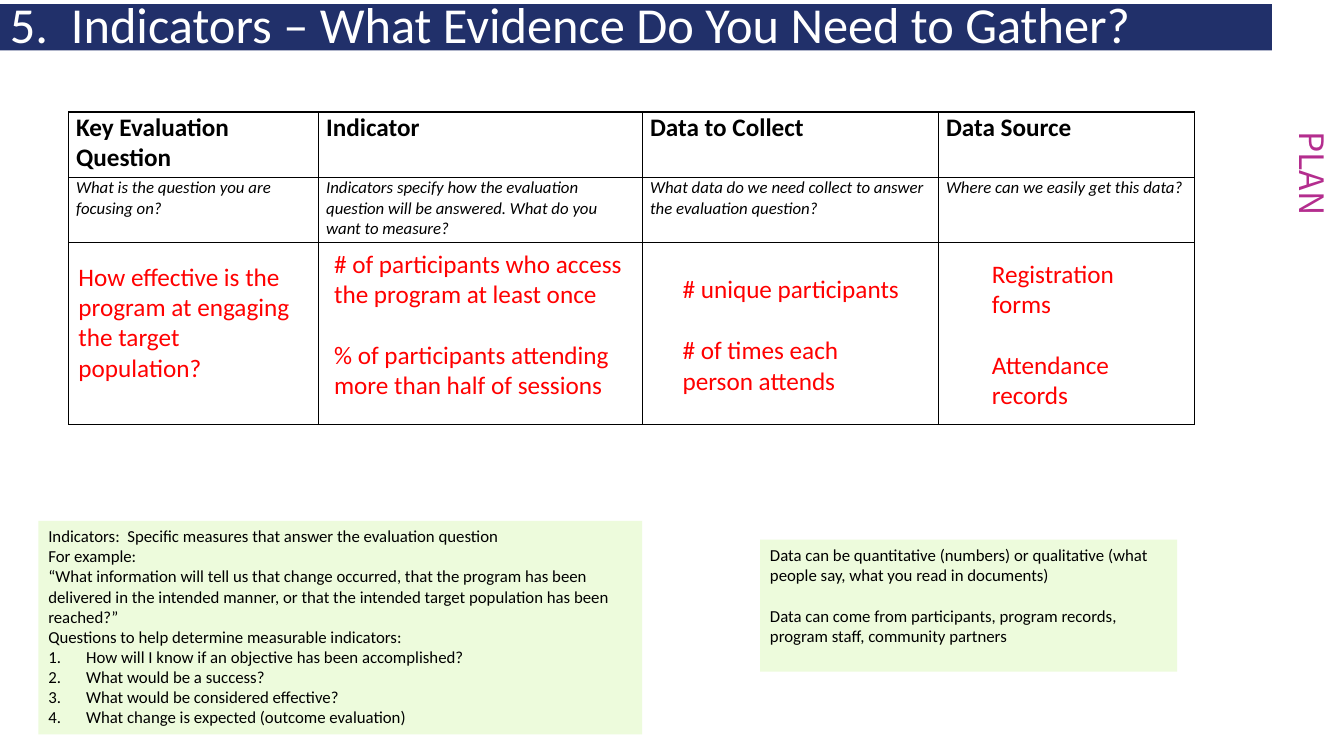
from dataclasses import dataclass
from itertools import accumulate

from lxml.etree import SubElement
from pptx import Presentation
from pptx.dml.color import RGBColor
from pptx.enum.shapes import MSO_SHAPE
from pptx.enum.text import MSO_ANCHOR, PP_ALIGN
from pptx.oxml.ns import qn
from pptx.util import Pt

TITLE = "5.  Indicators – What Evidence Do You Need to Gather?"
STAGE = "PLAN"

# heading, prompt, column width
COLUMNS = [
    ("Key Evaluation Question", "What is the question you are focusing on?", 178.6),
    ("Indicator", "Indicators specify how the evaluation question will be answered. "
     "What do you want to measure?", 231.4),
    ("Data to Collect", "What data do we need collect to answer the evaluation question?", 211.4),
    ("Data Source", "Where can we easily get this data?", 182.9),
]
ROW_HEIGHTS = [47, 46.5, 130]
TABLE_LEFT, TABLE_TOP = 49, 80

# offset from the column's left edge, top, width, height, paragraphs
ANSWERS = [
    (0, 183, 172, 94, ["How effective is the program at engaging the target population?"]),
    (4, 173.5, 227, 117, ["# of participants who access the program at least once",
                          "% of participants attending more than half of sessions"]),
    (21.5, 192, 178, 94, ["# unique participants", "# of times each person attends"]),
    (31, 181, 123, 117, ["Registration forms", "Attendance records"]),
]

INDICATOR_NOTE = [
    "Indicators:  Specific measures that answer the evaluation question",
    "For example:",
    "“What information will tell us that change occurred, that the program has been delivered "
    "in the intended manner, or that the intended target population has been reached?”",
    "Questions to help determine measurable indicators:",
]
INDICATOR_QUESTIONS = [
    "How will I know if an objective has been accomplished?",
    "What would be a success?",
    "What would be considered effective?",
    "What change is expected (outcome evaluation)",
]
DATA_NOTE = [
    "Data can be quantitative (numbers) or qualitative (what people say, "
    "what you read in documents)",
    "Data can come from participants, program records, program staff, community partners",
]


@dataclass(frozen=True)
class Theme:
    font: str = "Calibri"
    stage_font: str = "Noto Sans CJK TC"
    navy: str = "21306A"
    white: str = "FFFFFF"
    black: str = "000000"
    red: str = "FF0000"
    magenta: str = "B42D8E"
    pale_green: str = "EDFBDC"
    title_size: float = 36
    stage_size: float = 24
    large_size: float = 18
    small_size: float = 12
    line_height: float = 1.22  # height of one text line, relative to its size


THEME = Theme()


def add_run(paragraph, text, size, color, font=THEME.font, bold=False, italic=False):
    run = paragraph.add_run()
    run.text = text
    run.font.name = font
    run.font.size = Pt(size)
    run.font.bold = bold
    run.font.italic = italic
    run.font.color.rgb = RGBColor.from_string(color)


def add_paragraphs(frame, texts, size, color, gap=0):
    """Fill an empty frame, one paragraph per text, with gap lines between them."""
    frame.word_wrap = True
    for index, text in enumerate(texts):
        paragraph = frame.add_paragraph() if index else frame.paragraphs[0]
        paragraph.alignment = PP_ALIGN.LEFT
        if index and gap:
            paragraph.space_before = Pt(gap * size * THEME.line_height)
        add_run(paragraph, text, size, color)


def number_paragraph(paragraph, indent=27):
    properties = paragraph._p.get_or_add_pPr()
    properties.set("marL", str(Pt(indent)))
    properties.set("indent", str(-Pt(indent)))
    SubElement(properties, qn("a:buFont"), typeface="+mj-lt")
    SubElement(properties, qn("a:buAutoNum"), type="arabicPeriod")


def add_panel(slide, left, top, width, height, fill, anchor=MSO_ANCHOR.TOP):
    panel = slide.shapes.add_shape(
        MSO_SHAPE.RECTANGLE, Pt(left), Pt(top), Pt(width), Pt(height))
    panel.shadow.inherit = False
    panel.fill.solid()
    panel.fill.fore_color.rgb = RGBColor.from_string(fill)
    panel.line.fill.background()
    panel.text_frame.vertical_anchor = anchor
    return panel


def outline_cell(cell):
    properties = cell._tc.get_or_add_tcPr()
    for side in ("lnL", "lnR", "lnT", "lnB"):
        line = SubElement(properties, qn(f"a:{side}"), w=str(Pt(1)))
        SubElement(SubElement(line, qn("a:solidFill")), qn("a:srgbClr"), val=THEME.black)
    cell.fill.background()


def add_indicator_table(slide):
    widths = [width for _, _, width in COLUMNS]
    table = slide.shapes.add_table(
        len(ROW_HEIGHTS), len(COLUMNS), Pt(TABLE_LEFT), Pt(TABLE_TOP),
        Pt(sum(widths)), Pt(sum(ROW_HEIGHTS))).table
    table.first_row = table.horz_banding = False
    for row, height in zip(table.rows, ROW_HEIGHTS):
        row.height = Pt(height)
    for cell in table.iter_cells():
        cell.margin_left = cell.margin_right = Pt(5.4)
        cell.margin_top = cell.margin_bottom = 0
        outline_cell(cell)
    for index, (heading, prompt, width) in enumerate(COLUMNS):
        table.columns[index].width = Pt(width)
        add_run(table.cell(0, index).text_frame.paragraphs[0], heading,
                THEME.large_size, THEME.black, bold=True)
        add_run(table.cell(1, index).text_frame.paragraphs[0], prompt,
                THEME.small_size, THEME.black, italic=True)


def add_answers(slide):
    column_lefts = accumulate((width for _, _, width in COLUMNS), initial=TABLE_LEFT)
    for column_left, (offset, top, width, height, texts) in zip(column_lefts, ANSWERS):
        box = slide.shapes.add_textbox(
            Pt(column_left + offset), Pt(top), Pt(width), Pt(height))
        add_paragraphs(box.text_frame, texts, THEME.large_size, THEME.red, gap=1)


def add_banner(slide):
    stage = add_panel(slide, 842.4, 105.8, 190.8, 36, THEME.white)
    stage.rotation = 90
    paragraph = stage.text_frame.paragraphs[0]
    paragraph.alignment = PP_ALIGN.CENTER
    add_run(paragraph, STAGE, THEME.stage_size, THEME.magenta, font=THEME.stage_font)

    banner = add_panel(slide, 0, 2.9, 908.6, 33.1, THEME.navy, MSO_ANCHOR.MIDDLE)
    add_paragraphs(banner.text_frame, [TITLE], THEME.title_size, THEME.white)
    banner.text_frame.paragraphs[0].line_spacing = 0.9


def add_notes_panels(slide):
    indicator_panel = add_panel(slide, 27.4, 372, 431.3, 152.6, THEME.pale_green)
    frame = indicator_panel.text_frame
    add_paragraphs(frame, INDICATOR_NOTE + INDICATOR_QUESTIONS, THEME.small_size, THEME.black)
    for paragraph in frame.paragraphs[len(INDICATOR_NOTE):]:
        number_paragraph(paragraph)

    data_panel = add_panel(slide, 542.9, 385.4, 298, 94.3, THEME.pale_green)
    add_paragraphs(data_panel.text_frame, DATA_NOTE, THEME.small_size, THEME.black, gap=1)


def main():
    presentation = Presentation()
    presentation.slide_width, presentation.slide_height = Pt(960), Pt(540)
    slide = presentation.slides.add_slide(presentation.slide_layouts[6])
    add_banner(slide)
    add_indicator_table(slide)
    add_answers(slide)
    add_notes_panels(slide)
    presentation.save("out.pptx")


if __name__ == "__main__":
    main()
